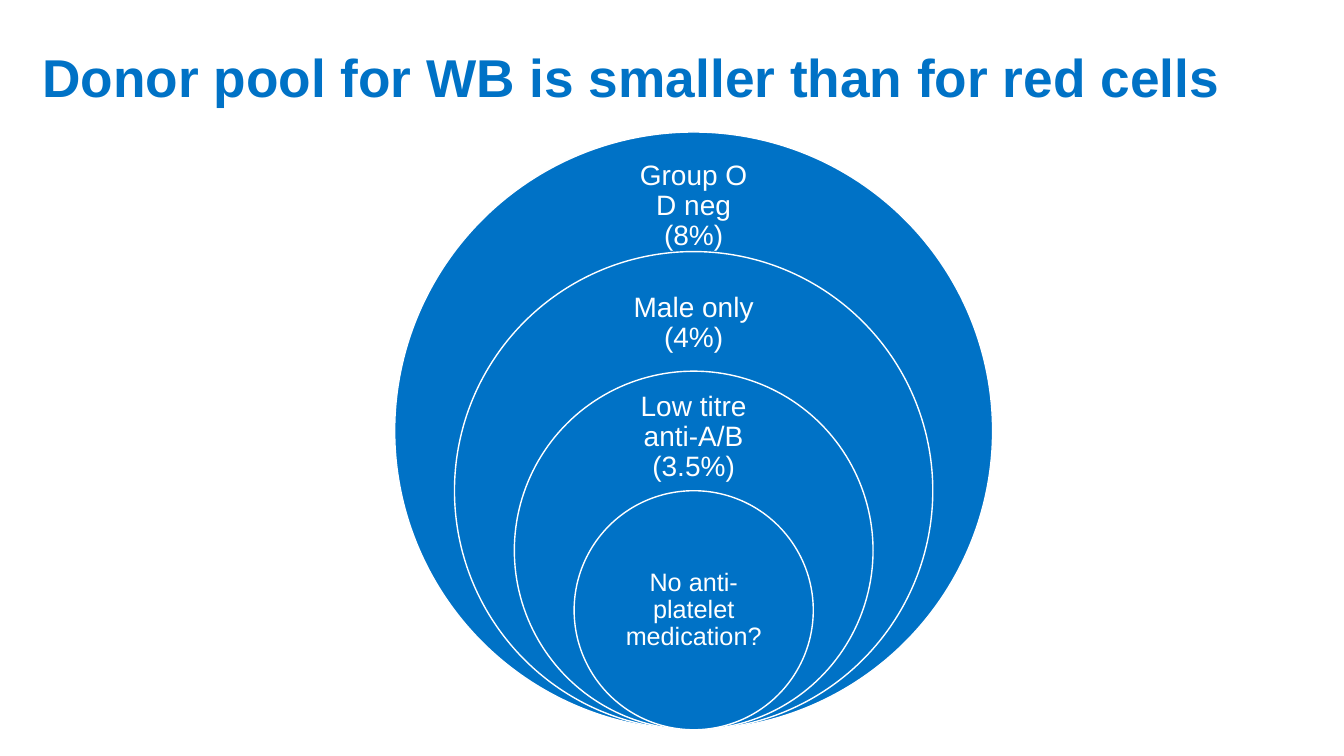
from pptx import Presentation
from pptx.dml.color import RGBColor
from pptx.enum.shapes import MSO_SHAPE
from pptx.enum.text import MSO_ANCHOR, MSO_AUTO_SIZE, PP_ALIGN
from pptx.util import Inches, Pt

TITLE = "Donor pool for WB is smaller than for red cells"
# label, top, width, height, inset (inches), text size (points)
RINGS = [
    ("Group O D neg (8%)", 1.6, 1.66, 0.89, 0.16, 20),
    ("Male only (4%)", 2.78, 1.66, 0.85, 0.16, 20),
    ("Low titre anti-A/B (3.5%)", 3.94, 1.66, 0.8, 0.16, 20),
    ("No anti-platelet medication?", 5.46, 1.68, 1.19, 0.14, 18),
]
COLORS = {"blue": "0072C6", "white": "FFFFFF"}
MIDDLE, BOTTOM, OUTER = 6.88, 7.24, 5.93
SHRINK = 0.2


def color(name):
    return RGBColor.from_string(COLORS[name])


def write(shape, text, size, name, align, inset=0, bold=False):
    frame = shape.text_frame
    frame.text = text
    frame.word_wrap = True
    frame.auto_size = MSO_AUTO_SIZE.NONE
    frame.vertical_anchor = MSO_ANCHOR.MIDDLE
    frame.margin_left = frame.margin_right = Inches(inset)
    frame.margin_top = frame.margin_bottom = Inches(inset)
    para = frame.paragraphs[0]
    para.alignment = align
    para.line_spacing = 0.9
    font = para.runs[0].font
    font.name, font.size, font.bold = "Arial", Pt(size), bold
    font.color.rgb = color(name)


def add_ring(slide, size):
    """Draw a circle that rests on the shared bottom point."""
    ring = slide.shapes.add_shape(
        MSO_SHAPE.OVAL, Inches(MIDDLE - size / 2), Inches(BOTTOM - size),
        Inches(size), Inches(size))
    ring.shadow.inherit = False
    ring.fill.solid()
    ring.fill.fore_color.rgb = color("blue")
    ring.line.color.rgb = color("white")
    ring.line.width = Pt(1)


def main():
    deck = Presentation()
    deck.slide_width, deck.slide_height = Inches(13.33), Inches(7.5)
    slide = deck.slides.add_slide(deck.slide_layouts[5])

    title = slide.shapes.title
    title.left, title.top = Inches(0.42), Inches(0.38)
    title.width, title.height = Inches(12.91), Inches(0.83)
    write(title, TITLE, 38, "blue", PP_ALIGN.LEFT, bold=True)

    for i, (text, top, width, height, inset, size) in enumerate(RINGS):
        add_ring(slide, OUTER * (1 - SHRINK * i))
        label = slide.shapes.add_textbox(
            Inches(MIDDLE - width / 2), Inches(top), Inches(width), Inches(height))
        write(label, text, size, "white", PP_ALIGN.CENTER, inset)

    deck.save("out.pptx")


if __name__ == "__main__":
    main()
